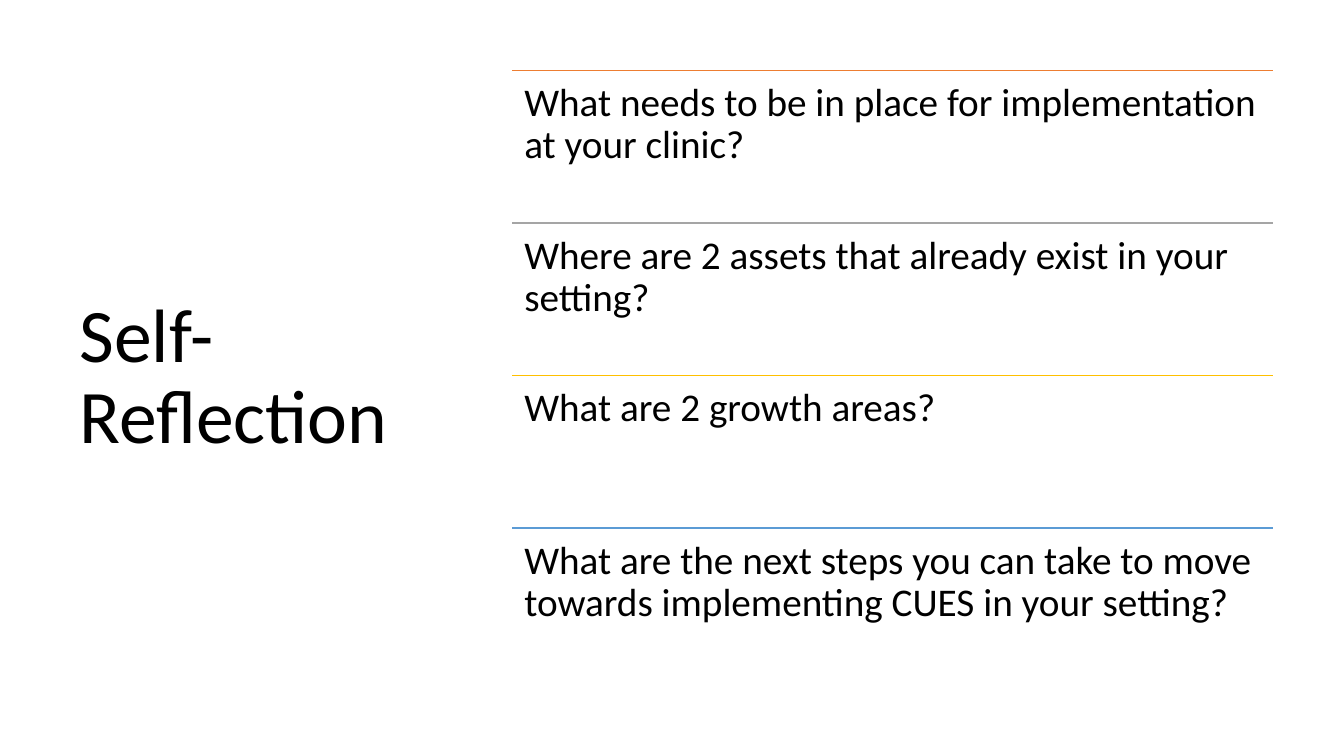
from dataclasses import dataclass

from lxml.etree import SubElement
from pptx import Presentation
from pptx.dml.color import RGBColor
from pptx.enum.shapes import MSO_CONNECTOR
from pptx.enum.text import MSO_ANCHOR
from pptx.oxml.ns import qn
from pptx.slide import Slide
from pptx.util import Inches, Pt

COLORS = {
    "text": "000000",
    "orange": "ED7D31",
    "gray": "A5A5A5",
    "gold": "FFC000",
    "blue": "5B9BD5",
}
FONT = "Calibri"
LIST_LEFT, LIST_TOP = 5.08, 0.7
LIST_WIDTH, ROW_HEIGHT = 7.55, 1.513


@dataclass(frozen=True)
class Box:
    left: float
    top: float
    width: float
    height: float


@dataclass(frozen=True)
class Question:
    text: str
    color: str


QUESTIONS = [
    Question("What needs to be in place for implementation at your clinic?", "orange"),
    Question("Where are 2 assets that already exist in your setting?", "gray"),
    Question("What are 2 growth areas?", "gold"),
    Question("What are the next steps you can take to move towards "
             "implementing CUES in your setting?", "blue"),
]


def add_text(slide: Slide, box: Box, text: str, size: int, anchor: MSO_ANCHOR,
             inset_x: float, inset_y: float, space_after: float = 0) -> None:
    sp = slide.shapes.add_textbox(Inches(box.left), Inches(box.top),
                                  Inches(box.width), Inches(box.height))
    tf = sp.text_frame
    tf.word_wrap = True
    tf.vertical_anchor = anchor
    tf.margin_left = tf.margin_right = Inches(inset_x)
    tf.margin_top = tf.margin_bottom = Inches(inset_y)
    p = tf.paragraphs[0]
    p.line_spacing = 0.9
    p.space_after = Pt(space_after)
    r = p.add_run()
    r.text = text
    r.font.name = FONT
    r.font.size = Pt(size)
    r.font.color.rgb = RGBColor.from_string(COLORS["text"])


def add_rule(slide: Slide, left: float, top: float, width: float, color: str) -> None:
    line = slide.shapes.add_connector(MSO_CONNECTOR.STRAIGHT, Inches(left), Inches(top),
                                      Inches(left + width), Inches(top))
    line.line.color.rgb = RGBColor.from_string(COLORS[color])
    line.line.width = Pt(1)
    SubElement(line._element.spPr, qn("a:effectLst"))


def add_question(slide: Slide, row: int, question: Question) -> None:
    top = LIST_TOP + row * ROW_HEIGHT
    add_rule(slide, LIST_LEFT, top, LIST_WIDTH, question.color)
    add_text(slide, Box(LIST_LEFT, top, LIST_WIDTH, ROW_HEIGHT), question.text, 28,
             MSO_ANCHOR.TOP, 0.12, 0.12, space_after=9.8)


def main() -> None:
    prs = Presentation()
    prs.slide_width, prs.slide_height = Inches(13.33), Inches(7.5)
    slide = prs.slides.add_slide(prs.slide_layouts[6])
    add_text(slide, Box(0.69, 0.7, 3.74, 6.11), "Self-Reflection", 54,
             MSO_ANCHOR.MIDDLE, 0.1, 0.05)
    for row, question in enumerate(QUESTIONS):
        add_question(slide, row, question)
    prs.save("out.pptx")


if __name__ == "__main__":
    main()
